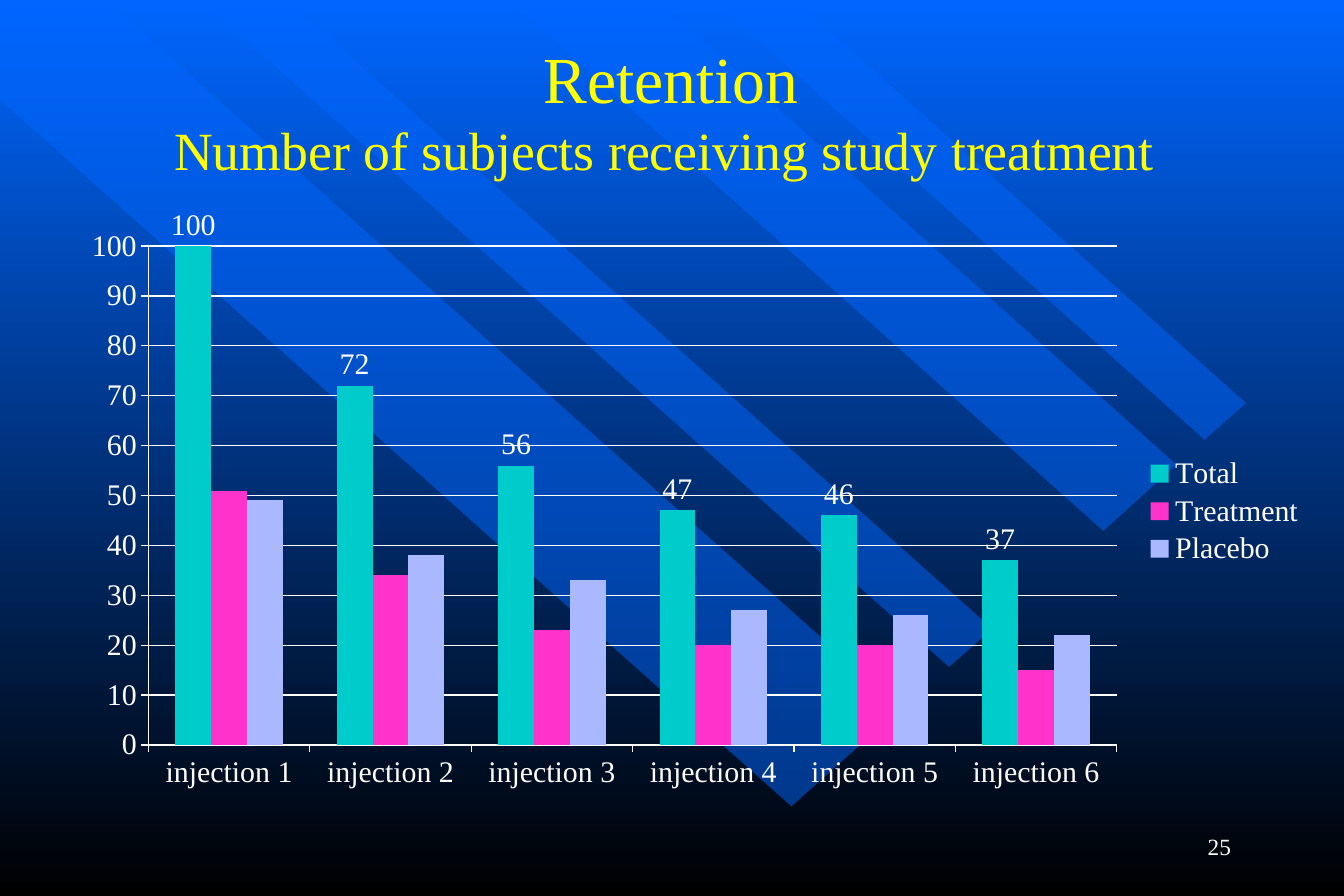
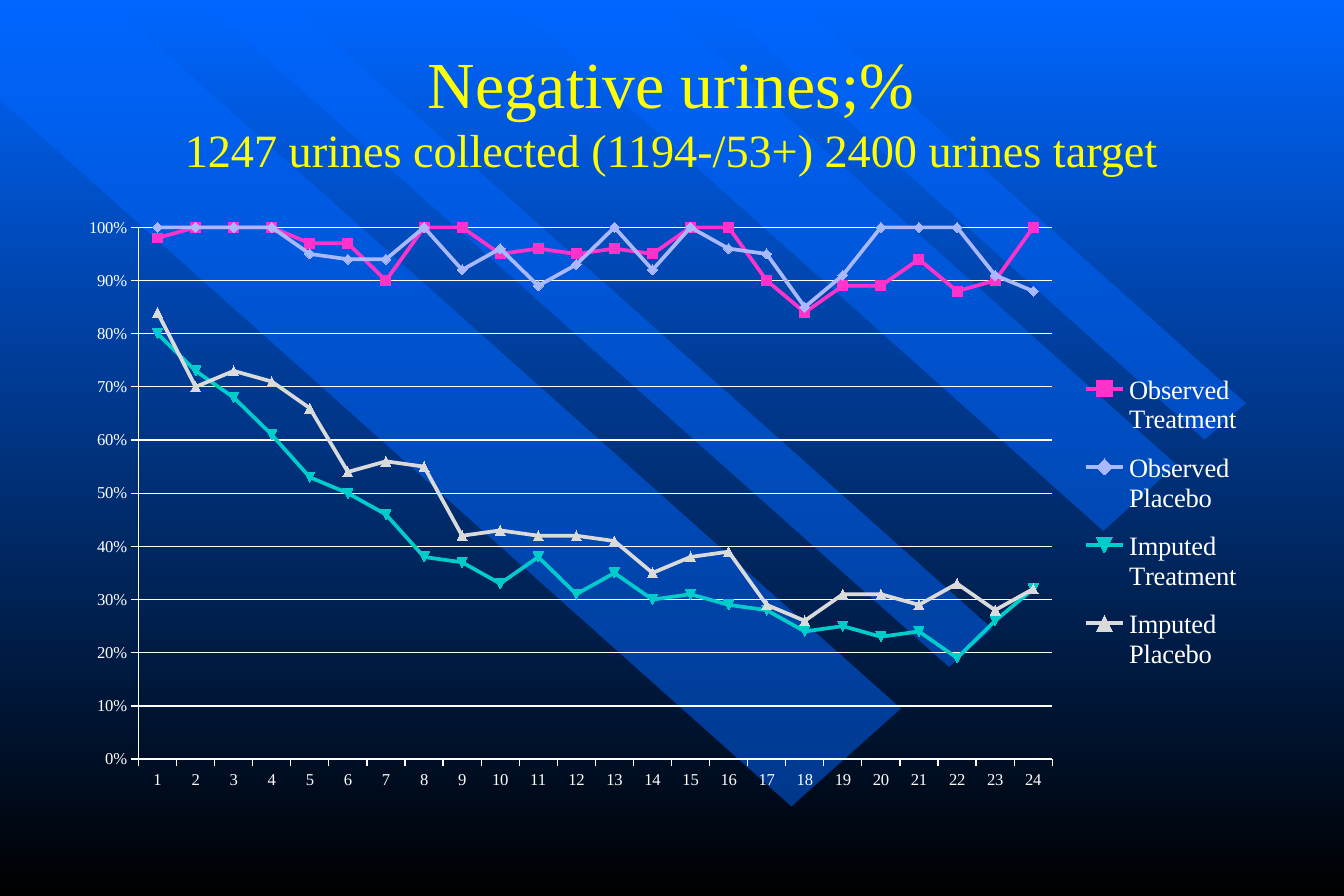
from lxml import etree
from pptx import Presentation
from pptx.chart.data import CategoryChartData
from pptx.dml.color import RGBColor
from pptx.enum.chart import (XL_CHART_TYPE, XL_LABEL_POSITION,
                             XL_LEGEND_POSITION, XL_TICK_MARK)
from pptx.enum.text import MSO_ANCHOR, PP_ALIGN
from pptx.oxml.ns import qn
from pptx.util import Pt

BARS, LINES = XL_CHART_TYPE.COLUMN_CLUSTERED, XL_CHART_TYPE.LINE_MARKERS
ABOVE = XL_LABEL_POSITION.OUTSIDE_END
SIDE = XL_LEGEND_POSITION.RIGHT
OUT, NONE = XL_TICK_MARK.OUTSIDE, XL_TICK_MARK.NONE
MIDDLE = MSO_ANCHOR.MIDDLE
CENTER, RIGHT = PP_ALIGN.CENTER, PP_ALIGN.RIGHT

BLUE = RGBColor(0x00, 0x66, 0xFF)
BLACK = RGBColor(0x00, 0x00, 0x00)
WHITE = RGBColor(0xFF, 0xFF, 0xFF)
YELLOW = RGBColor(0xFF, 0xFF, 0x00)
TEAL = RGBColor(0x00, 0xCC, 0xCC)
PINK = RGBColor(0xFF, 0x33, 0xCC)
LILAC = RGBColor(0xAA, 0xB8, 0xFF)
GREY = RGBColor(0xDA, 0xDA, 0xDA)

FACE = "Times New Roman"
BANDS = [
    [(543, 427), (64, 0), (0, 0), (0, 60), (477, 486)],
    [(173, 0), (598, 379), (572, 402), (121, 0)],
    [(396, 0), (709, 280), (665, 320), (307, 0)],
    [(430, 0), (726, 265), (751, 243), (479, 0)],
]


def put(item, **values):
    """Set each named attribute on the item."""
    for name, value in values.items():
        setattr(item, name, value)


def place(parent, box, after=None, inner=False):
    """Give a chart part a fixed place, in fractions of the chart."""
    for old in parent.findall(qn("c:layout")):
        parent.remove(old)
    layout = etree.Element(qn("c:layout"))
    if after is None:
        parent.insert(0, layout)
    else:
        parent.find(qn(after)).addnext(layout)
    manual = etree.SubElement(layout, qn("c:manualLayout"))
    tags = [("xMode", "edge"), ("yMode", "edge"), *zip("xywh", box)]
    if inner:
        tags.insert(0, ("layoutTarget", "inner"))
    for tag, value in tags:
        etree.SubElement(manual, qn("c:" + tag)).set("val", str(value))


class Deck:
    """Holds the shared style and the current slide."""

    def __init__(self):
        self.prs = Presentation()
        put(self.prs, slide_width=Pt(810), slide_height=Pt(540))

    def font(self, font, size, color):
        put(font, name=FACE, size=Pt(size))
        font.color.rgb = color

    def page(self):
        """Start a slide with its gradient and diagonal bands."""
        self.slide = self.prs.slides.add_slide(self.prs.slide_layouts[6])
        fill = self.slide.background.fill
        fill.gradient()
        fill.gradient_angle = 270
        for stop, spot, color in zip(fill.gradient_stops, (0, 1), (BLUE, BLACK)):
            stop.position = spot
            stop.color.rgb = color
        for points in BANDS:
            self.band(points)

    def band(self, points):
        pen = self.slide.shapes.build_freeform(*points[0], scale=Pt(1))
        pen.add_line_segments(points[1:], close=True)
        shape = pen.convert_to_shape()
        shape.shadow.inherit = False
        shape.line.fill.background()
        shape.fill.solid()
        shape.fill.fore_color.rgb = BLUE
        tint = shape.fill._xPr.find(".//" + qn("a:srgbClr"))
        etree.SubElement(tint, qn("a:alpha")).set("val", "50000")

    def text(self, box, lines, color, align):
        """Write lines of (text, size) as one paragraph."""
        shape = self.slide.shapes.add_textbox(*map(Pt, box))
        frame = shape.text_frame
        put(frame, word_wrap=True, vertical_anchor=MIDDLE)
        para = frame.paragraphs[0]
        para.alignment = align
        for place_no, (words, size) in enumerate(lines):
            if place_no:
                para.add_line_break()
            run = para.add_run()
            run.text = words
            self.font(run.font, size, color)

    def title(self, head, sub, size):
        self.text((60.5, 18, 688, 96), [(head, 39.6), (sub, size)], YELLOW, CENTER)

    def number(self, value):
        self.text((580, 492, 169, 36), [(str(value), 14)], WHITE, RIGHT)

    def chart(self, kind, wide, cats, rows, size, plot, key, key_size, scale, style):
        """Draw a chart; rows hold (name, colour, values)."""
        data = CategoryChartData()
        data.categories = cats
        for name, _, values in rows:
            data.add_series(name, values)
        frame = self.slide.shapes.add_chart(
            kind, Pt(40.5), Pt(126), Pt(wide), Pt(356.5), data)
        chart = frame.chart
        put(chart, has_title=False, has_legend=True)
        self.font(chart.font, size, WHITE)
        chart.plots[0].vary_by_categories = False
        place(chart._chartSpace.find(".//" + qn("c:plotArea")), plot, inner=True)

        # Legend
        put(chart.legend, position=SIDE, include_in_layout=False)
        self.font(chart.legend.font, key_size, WHITE)
        place(chart.legend._element, key, after="c:legendPos")

        # Axes
        axis = chart.value_axis
        put(axis, has_major_gridlines=True, **scale)
        put(axis.tick_labels, number_format=style, number_format_is_linked=False)
        for side in (axis, chart.category_axis):
            put(side, major_tick_mark=OUT, minor_tick_mark=NONE)
        for part in (axis, chart.category_axis, axis.major_gridlines):
            self.line(part.format.line, WHITE, 0.75)
        return chart

    def line(self, line, color, width):
        line.color.rgb = color
        line.width = Pt(width)

    def paint(self, form, color):
        form.fill.solid()
        form.fill.fore_color.rgb = color

    def bars(self, cats, rows, **look):
        chart = self.chart(BARS, 754, cats, rows, **look)
        put(chart.plots[0], gap_width=150, overlap=0)
        for bar, (_, color, _) in zip(chart.plots[0].series, rows):
            self.paint(bar.format, color)
        labels = chart.plots[0].series[0].data_labels
        put(labels, show_value=True, position=ABOVE)
        self.font(labels.font, look["size"], WHITE)

    def lines(self, cats, rows, **look):
        chart = self.chart(LINES, 728.5, cats, rows, **look)
        for curve, (_, color, _) in zip(chart.plots[0].series, rows):
            curve.smooth = False
            self.line(curve.format.line, color, 2.25)
            curve.marker.size = 6
            self.paint(curve.marker.format, color)
            self.line(curve.marker.format.line, color, 0.75)


def main():
    deck = Deck()

    # Retention
    deck.page()
    deck.title("Retention", "Number of subjects receiving study treatment ", 32.4)
    deck.bars(
        [f"injection {n}" for n in range(1, 7)],
        [("Total", TEAL, (100, 72, 56, 47, 46, 37)),
         ("Treatment", PINK, (51, 34, 23, 20, 20, 15)),
         ("Placebo", LILAC, (49, 38, 33, 27, 26, 22))],
        size=18, plot=(0.065, 0.061, 0.774, 0.845),
        key=(0.86, 0.41, 0.13, 0.2), key_size=18, style="General",
        scale=dict(minimum_scale=0, maximum_scale=100, major_unit=10))
    deck.number(25)

    # Negative urines
    deck.page()
    deck.title("Negative urines;%",
               "1247 urines collected (1194-/53+) 2400 urines target", 27.9)
    deck.lines(
        [str(n) for n in range(1, 25)],
        [("Observed Treatment", PINK,
          (0.98, 1, 1, 1, 0.97, 0.97, 0.9, 1, 1, 0.95, 0.96, 0.95,
           0.96, 0.95, 1, 1, 0.9, 0.84, 0.89, 0.89, 0.94, 0.88, 0.9, 1)),
         ("Observed Placebo", LILAC,
          (1, 1, 1, 1, 0.95, 0.94, 0.94, 1, 0.92, 0.96, 0.89, 0.93,
           1, 0.92, 1, 0.96, 0.95, 0.85, 0.91, 1, 1, 1, 0.91, 0.88)),
         ("Imputed Treatment", TEAL,
          (0.8, 0.73, 0.68, 0.61, 0.53, 0.5, 0.46, 0.38, 0.37, 0.33, 0.38, 0.31,
           0.35, 0.3, 0.31, 0.29, 0.28, 0.24, 0.25, 0.23, 0.24, 0.19, 0.26, 0.32)),
         ("Imputed Placebo", GREY,
          (0.84, 0.7, 0.73, 0.71, 0.66, 0.54, 0.56, 0.55, 0.42, 0.43, 0.42, 0.42,
           0.41, 0.35, 0.38, 0.39, 0.29, 0.26, 0.31, 0.31, 0.29, 0.33, 0.28, 0.32))],
        size=10, plot=(0.059, 0.031, 0.756, 0.899),
        key=(0.83, 0.25, 0.15, 0.56), key_size=16, style="0%",
        scale=dict(minimum_scale=0, maximum_scale=1, major_unit=0.1))

    deck.prs.save("out.pptx")


if __name__ == "__main__":
    main()
